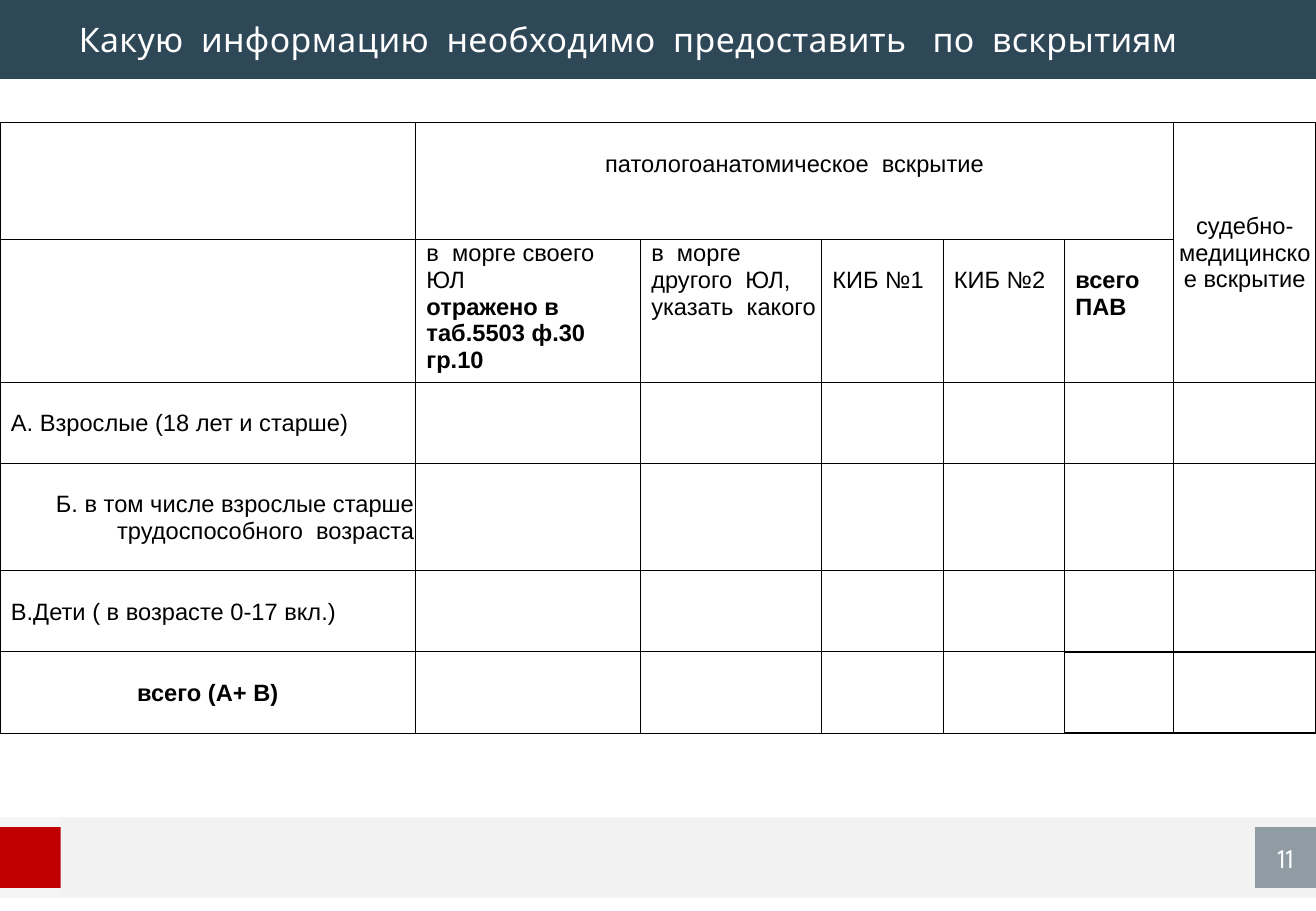
from lxml import etree
from pptx import Presentation
from pptx.dml.color import RGBColor
from pptx.enum.shapes import MSO_SHAPE
from pptx.enum.text import MSO_ANCHOR, PP_ALIGN
from pptx.oxml.ns import qn
from pptx.util import Inches, Pt

RECTANGLE = MSO_SHAPE.RECTANGLE
TOP, MIDDLE = MSO_ANCHOR.TOP, MSO_ANCHOR.MIDDLE
LEFT, CENTER, RIGHT = PP_ALIGN.LEFT, PP_ALIGN.CENTER, PP_ALIGN.RIGHT

# Content
TITLE = "Какую  информацию  необходимо  предоставить   по  вскрытиям"
PAGE_NUMBER = "11"
AUTOPSY_GROUP = "патологоанатомическое  вскрытие"
FORENSIC = "судебно-медицинское вскрытие"
# Paragraphs as (text, bold), then the number of lines the text starts below the top
COLUMN_HEADS = [
    ([("в  морге своего ЮЛ", False), ("отражено в таб.5503 ф.30  гр.10", True)], 0),
    ([("в  морге  другого  ЮЛ,", False), ("указать  какого", False)], 0),
    ([("КИБ №1", False)], 1),
    ([("КИБ №2", False)], 1),
    ([("всего  ПАВ", True)], 1),
]
ROW_HEADS = [
    ("А. Взрослые (18 лет и старше)", LEFT, False),
    ("Б. в том числе взрослые старше трудоспособного  возраста", RIGHT, False),
    ("В.Дети ( в возрасте 0-17 вкл.)", LEFT, False),
    ("всего (А+ В)", CENTER, True),
]

THEME = {
    "navy": "2F4858", "red": "C00000", "gray": "F2F2F2", "white": "FFFFFF", "black": "000000",
    "title_font": "League Spartan", "table_font": "Arial",
    "title_size": 20, "number_size": 16, "table_size": 14,
    "thin": 0.5, "thick": 1,
}

# Layout, in inches
SLIDE_W, SLIDE_H = 10.83, 7.5
HEADER_H = 0.65
FOOTER_TOP, FOOTER_H = 6.73, 0.66
BADGE = 0.5
BADGE_TOP = FOOTER_TOP + (FOOTER_H - BADGE) / 2
TABLE_TOP = 1.01
COLUMN_WIDTHS = [3.42, 1.85, 1.49, 1, 1, 0.9, 1.17]
ROW_HEIGHTS = [0.96, 1.1, 0.67, 0.88, 0.67, 0.67]
PAD, INDENT, LINE_H = 0.01, 0.09, 0.22
TOTAL_COLUMN, FORENSIC_COLUMN = 5, 6


def write(frame, paragraphs, *, font, size, color, align=LEFT, spacing=0):
    """Fill a text frame with (text, bold) paragraphs."""
    for index, (text, bold) in enumerate(paragraphs):
        paragraph = frame.add_paragraph() if index else frame.paragraphs[0]
        paragraph.alignment = align
        run = paragraph.add_run()
        run.text = text
        run.font.name, run.font.size, run.font.bold = font, Pt(size), bold
        run.font.color.rgb = RGBColor.from_string(color)
        if spacing:
            run.font._element.set("spc", str(spacing))


def add_block(slide, left, top, width, height, color, opacity=100):
    block = slide.shapes.add_shape(
        RECTANGLE, Inches(left), Inches(top), Inches(width), Inches(height))
    block.shadow.inherit = False
    block.line.fill.background()
    block.fill.solid()
    block.fill.fore_color.rgb = RGBColor.from_string(color)
    if opacity < 100:
        rgb = block._element.spPr.find(".//" + qn("a:srgbClr"))
        etree.SubElement(rgb, qn("a:alpha")).set("val", str(opacity * 1000))
    return block


def fill_cell(cell, paragraphs, align=LEFT, anchor=MIDDLE, lines_down=0):
    cell.vertical_anchor = anchor
    cell.margin_left = Inches(INDENT if align == LEFT else PAD)
    cell.margin_right = Inches(PAD)
    cell.margin_top = Inches(PAD + lines_down * LINE_H)
    cell.margin_bottom = 0
    write(cell.text_frame, paragraphs, font=THEME["table_font"],
          size=THEME["table_size"], color=THEME["black"], align=align)


def set_borders(cell, row, column):
    """Thick lines frame the total and forensic columns, thin lines the rest."""
    last = column + cell.span_width - 1
    framed = column >= TOTAL_COLUMN
    thick = {
        "L": framed,
        "R": last >= TOTAL_COLUMN - 1,
        "T": framed and row in (0, 1, len(ROW_HEIGHTS) - 1),
        "B": framed and row >= len(ROW_HEIGHTS) - 2,
    }
    properties = cell._tc.get_or_add_tcPr()
    for position, (side, is_thick) in enumerate(thick.items()):
        line = etree.Element(qn("a:ln" + side))
        line.set("w", str(Pt(THEME["thick" if is_thick else "thin"])))
        fill = etree.SubElement(line, qn("a:solidFill"))
        etree.SubElement(fill, qn("a:srgbClr")).set("val", THEME["black"])
        properties.insert(position, line)


def add_autopsy_table(slide):
    frame = slide.shapes.add_table(
        len(ROW_HEIGHTS), len(COLUMN_WIDTHS), 0, Inches(TABLE_TOP),
        Inches(sum(COLUMN_WIDTHS)), Inches(sum(ROW_HEIGHTS)))
    table = frame.table
    table.first_row = table.horz_banding = False
    for column, width in zip(table.columns, COLUMN_WIDTHS):
        column.width = Inches(width)
    for row, height in zip(table.rows, ROW_HEIGHTS):
        row.height = Inches(height)

    # Headings
    table.cell(0, 1).merge(table.cell(0, TOTAL_COLUMN))
    table.cell(0, FORENSIC_COLUMN).merge(table.cell(1, FORENSIC_COLUMN))
    fill_cell(table.cell(0, 1), [(AUTOPSY_GROUP, False)], CENTER, TOP, 1)
    fill_cell(table.cell(0, FORENSIC_COLUMN), [(FORENSIC, False)], CENTER)
    for column, (paragraphs, lines_down) in enumerate(COLUMN_HEADS, start=1):
        fill_cell(table.cell(1, column), paragraphs, LEFT, TOP, lines_down)
    for row, (label, align, bold) in enumerate(ROW_HEADS, start=2):
        fill_cell(table.cell(row, 0), [(label, bold)], align)

    # Grid
    for row in range(len(ROW_HEIGHTS)):
        for column in range(len(COLUMN_WIDTHS)):
            cell = table.cell(row, column)
            cell.fill.background()
            if not cell.is_spanned:
                set_borders(cell, row, column)


def main():
    presentation = Presentation()
    presentation.slide_width, presentation.slide_height = Inches(SLIDE_W), Inches(SLIDE_H)
    slide = presentation.slides.add_slide(presentation.slide_layouts[6])

    # Bands and badges
    add_block(slide, 0, FOOTER_TOP, SLIDE_W, FOOTER_H, THEME["gray"])
    add_block(slide, 0, 0, SLIDE_W, HEADER_H, THEME["navy"])
    add_block(slide, 0, FOOTER_TOP, BADGE, FOOTER_H, THEME["white"], opacity=30)
    add_block(slide, 0, BADGE_TOP, BADGE, BADGE, THEME["red"])
    number = add_block(slide, SLIDE_W - BADGE, BADGE_TOP, BADGE, BADGE, THEME["navy"], opacity=50)
    number.text_frame.vertical_anchor = MIDDLE
    write(number.text_frame, [(PAGE_NUMBER, False)], font=THEME["title_font"],
          size=THEME["number_size"], color=THEME["white"], align=CENTER)

    # Title
    title = slide.shapes.add_textbox(Inches(0.65), 0, Inches(9.57), Inches(HEADER_H)).text_frame
    title.word_wrap = True
    title.vertical_anchor = MIDDLE
    title.margin_left = title.margin_right = title.margin_top = title.margin_bottom = 0
    write(title, [(TITLE, False)], font=THEME["title_font"], size=THEME["title_size"],
          color=THEME["white"], spacing=20)

    add_autopsy_table(slide)
    presentation.save("out.pptx")


if __name__ == "__main__":
    main()
